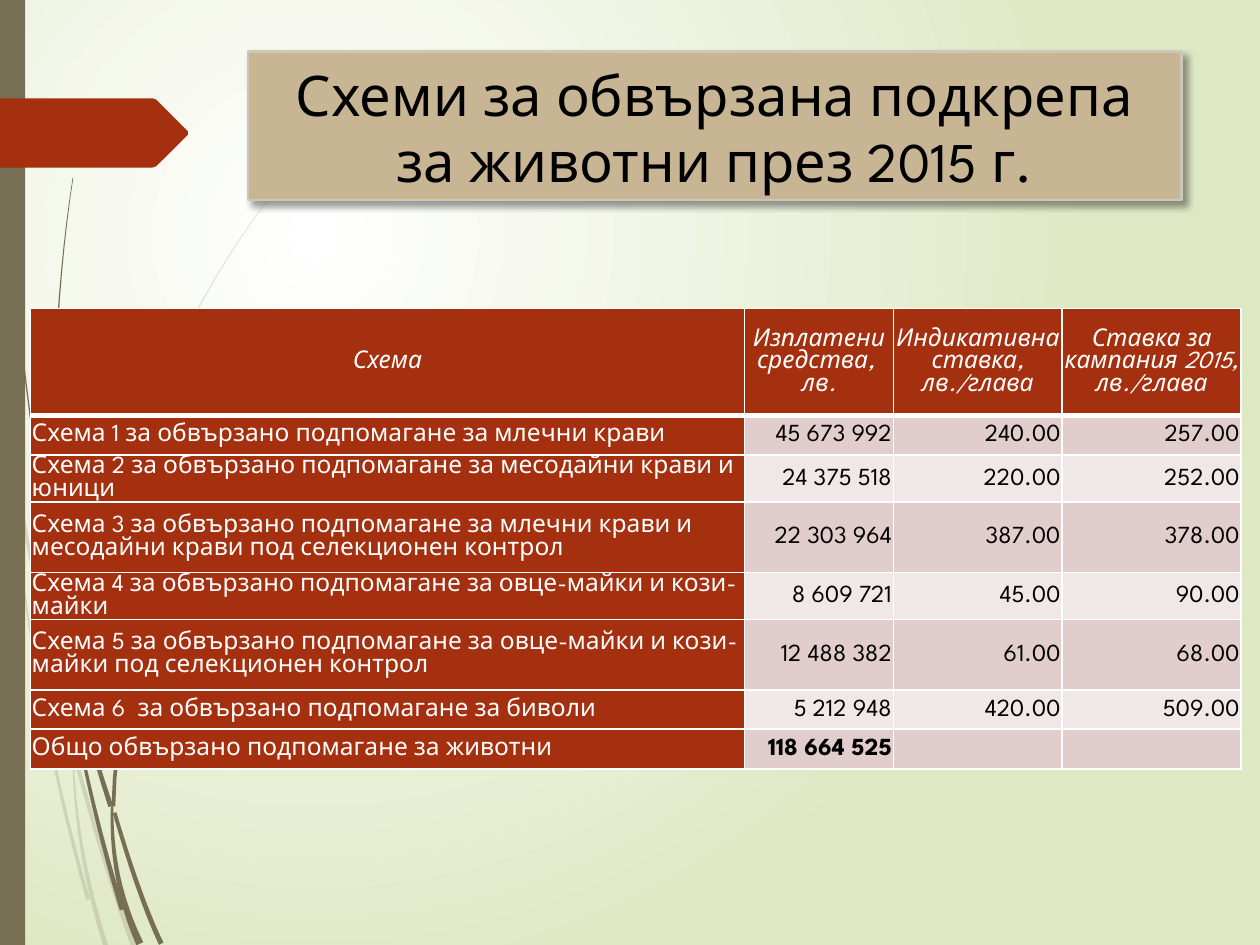
from math import hypot
from pptx import Presentation
from pptx.dml.color import RGBColor
from pptx.enum.shapes import MSO_SHAPE as Shape
from pptx.enum.text import MSO_ANCHOR as Anchor, PP_ALIGN as Align
from pptx.oxml import parse_xml
from pptx.util import Cm, Pt

FONT = "League Spartan"
RUST, OLIVE, WHITE, BLACK = "A53010", "766F54", "FFFFFF", "000000"
BANDS = ("E1CDCC", "F0E8E7")
NS = 'xmlns:a="http://schemas.openxmlformats.org/drawingml/2006/main"'
NS_P = 'xmlns:p="http://schemas.openxmlformats.org/presentationml/2006/main"'

TITLE = "Схеми за обвързана подкрепа за животни през 2015 г."
HEADER = (
    "Схема",
    "Изплатени средства, \nлв.",
    "Индикативна ставка, лв./глава",
    "Ставка за кампания 2015, лв./глава",
)
ROWS = [
    ("Схема 1 за обвързано подпомагане за млечни крави", "45 673 992", "240.00", "257.00"),
    ("Схема 2 за обвързано подпомагане за месодайни крави и юници", "24 375 518", "220.00", "252.00"),
    ("Схема 3 за обвързано подпомагане за млечни крави и месодайни крави под селекционен контрол",
     "22 303 964", "387.00", "378.00"),
    ("Схема 4 за обвързано подпомагане за овце-майки и кози-майки", "8 609 721", "45.00", "90.00"),
    ("Схема 5 за обвързано подпомагане за овце-майки и кози-майки под селекционен контрол",
     "12 488 382", "61.00", "68.00"),
    ("Схема 6  за обвързано подпомагане за биволи", "5 212 948", "420.00", "509.00"),
    ("Общо обвързано подпомагане за животни", "118 664 525", "", ""),
]
COLUMN_WIDTHS = (14.4, 3, 3.4, 3.61)
ROW_HEIGHTS = (2.16, 0.79, 0.79, 1.42, 0.79, 1.42, 0.79, 0.79)

# Drawing unit for the stems and the arrow
UNIT = Cm(2.54) / 100
# Each stem: four control points of its spine, width at the start and at the end
PALE_STEMS = [
    ((0, 290), (13, 395), (34, 500), (60, 597), 2, 4),
    ((60, 602), (74, 655), (91, 710), (106, 751), 3, 4),
    ((8, 350), (14, 470), (40, 610), (70, 714), 0.5, 3),
    ((58, 599), (59, 650), (68, 700), (84, 751), 1, 4),
    ((60, 597), (60, 430), (140, 250), (217, 153), 2, 0.5),
]
DARK_STEMS = [
    ((3, 0), (2, 160), (18, 320), (47, 477), 1, 1),
    ((50, 475), (55, 530), (72, 592), (88, 640), 1, 4),
    ((91, 645), (101, 680), (115, 722), (128, 749), 3, 4),
    ((47, 477), (53, 555), (76, 655), (97, 722), 1, 4),
    ((50, 472), (37, 360), (44, 230), (58, 141), 2, 0.5),
    ((90, 640), (92, 520), (150, 410), (216, 344), 3, 0.5),
    ((89, 640), (88, 690), (100, 725), (111, 749), 2, 6),
]
ARROW = [(149, 107), (124, 132), (121, 133), (0, 133), (0, 78), (121, 78), (124, 79), (149, 104)]


def paint(fill, color, alpha=None):
    fill.solid()
    fill.fore_color.rgb = RGBColor.from_string(color)
    if alpha:
        fill._xPr.find(".//{*}srgbClr").append(parse_xml(f'<a:alpha {NS} val="{alpha * 1000}"/>'))


def taper(a, b, c, d, start_width, end_width, steps=16):
    """Outline a cubic curve whose width changes evenly from start to end."""
    left, right = [], []
    for step in range(steps + 1):
        t = step / steps
        u = 1 - t
        x, y = (u**3 * a[i] + 3 * u * u * t * b[i] + 3 * u * t * t * c[i] + t**3 * d[i] for i in (0, 1))
        dx, dy = (u * u * (b[i] - a[i]) + 2 * u * t * (c[i] - b[i]) + t * t * (d[i] - c[i]) for i in (0, 1))
        offset = (u * start_width + t * end_width) / 2 / hypot(dx, dy)
        left.append((x - dy * offset, y + dx * offset))
        right.append((x + dy * offset, y - dx * offset))
    return left + right[::-1]


def finish(shape, color, alpha=None):
    shape.shadow.inherit = False
    paint(shape.fill, color, alpha)
    shape.line.fill.background()


def add_outline(slide, points, color, alpha=None):
    emu = [(round(x * UNIT), round(y * UNIT)) for x, y in points]
    builder = slide.shapes.build_freeform(*emu[0])
    builder.add_line_segments(emu[1:], close=True)
    finish(builder.convert_to_shape(), color, alpha)


def write(frame, text, align, size, spacing, color, bold=False, italic=False):
    for index, line in enumerate(text.split("\n")):
        paragraph = frame.add_paragraph() if index else frame.paragraphs[0]
        paragraph.alignment, paragraph.line_spacing = align, Pt(spacing)
        if line:
            run = paragraph.add_run()
            run.text = line
            font = run.font
            font.name, font.size, font.bold, font.italic = FONT, Pt(size), bold, italic
            font.color.rgb = RGBColor.from_string(color)


def add_borders(cell, bottom):
    properties = cell._tc.get_or_add_tcPr()
    for index, (side, width) in enumerate((("L", 1), ("R", 1), ("T", 1), ("B", bottom))):
        properties.insert(index, parse_xml(
            f'<a:ln{side} {NS} w="{Pt(width)}"><a:solidFill><a:srgbClr val="{WHITE}"/>'
            f'</a:solidFill></a:ln{side}>'))


def add_scheme_table(slide):
    table = slide.shapes.add_table(len(ROWS) + 1, len(HEADER), Cm(0.61), Cm(6.22),
                                   Cm(sum(COLUMN_WIDTHS)), Cm(sum(ROW_HEIGHTS))).table
    for column, width in zip(table.columns, COLUMN_WIDTHS):
        column.width = Cm(width)
    for row, height in zip(table.rows, ROW_HEIGHTS):
        row.height = Cm(height)
    for r, texts in enumerate([HEADER, *ROWS]):
        for c, text in enumerate(texts):
            cell = table.cell(r, c)
            head, label = r == 0, c == 0
            cell.margin_left = cell.margin_right = cell.margin_top = Cm(0.03)
            cell.margin_bottom = 0
            cell.vertical_anchor = Anchor.MIDDLE
            paint(cell.fill, RUST if head or label else BANDS[(r - 1) % 2])
            add_borders(cell, 3 if head else 1)
            align = Align.CENTER if head else Align.LEFT if label else Align.RIGHT
            write(cell.text_frame, text, align, 14, 13, WHITE if head or label else BLACK,
                  bold=r == len(ROWS) and not label, italic=head)


def add_title(slide):
    box = slide.shapes.add_shape(Shape.RECTANGLE, Cm(5), Cm(1.04), Cm(18.82), Cm(3))
    finish(box, "C8B594")
    paint(box.line.fill, "CCC7B7")
    box.line.width = Pt(1.25)
    box._element.spPr.find("{*}effectLst").append(parse_xml(
        f'<a:outerShdw {NS} blurRad="{Pt(4)}" dist="{Pt(3)}" dir="2700000" algn="tl" rotWithShape="0">'
        f'<a:srgbClr val="{BLACK}"><a:alpha val="40000"/></a:srgbClr></a:outerShdw>'))
    box.text_frame.word_wrap = True
    box.text_frame.vertical_anchor = Anchor.BOTTOM
    write(box.text_frame, TITLE, Align.CENTER, 32, 38, BLACK)


def set_background(slide):
    slide._element.cSld.insert(0, parse_xml(
        f'<p:bg {NS_P} {NS}><p:bgPr><a:gradFill rotWithShape="1"><a:gsLst>'
        f'<a:gs pos="0"><a:srgbClr val="{WHITE}"/></a:gs>'
        '<a:gs pos="100000"><a:srgbClr val="DFE8C4"/></a:gs></a:gsLst><a:path path="circle">'
        '<a:fillToRect l="50000" t="50000" r="100000" b="100000"/></a:path></a:gradFill>'
        '<a:effectLst/></p:bgPr></p:bg>'))


presentation = Presentation()
presentation.slide_width, presentation.slide_height = Cm(25.4), Cm(19.05)
slide = presentation.slides.add_slide(presentation.slide_layouts[6])
set_background(slide)
for stems, alpha in ((PALE_STEMS, 20), (DARK_STEMS, None)):
    for stem in stems:
        add_outline(slide, taper(*stem), OLIVE, alpha)
finish(slide.shapes.add_shape(Shape.RECTANGLE, 0, 0, Cm(0.51), Cm(19.05)), OLIVE)
add_outline(slide, ARROW, RUST)
add_scheme_table(slide)
add_title(slide)
presentation.save("out.pptx")
